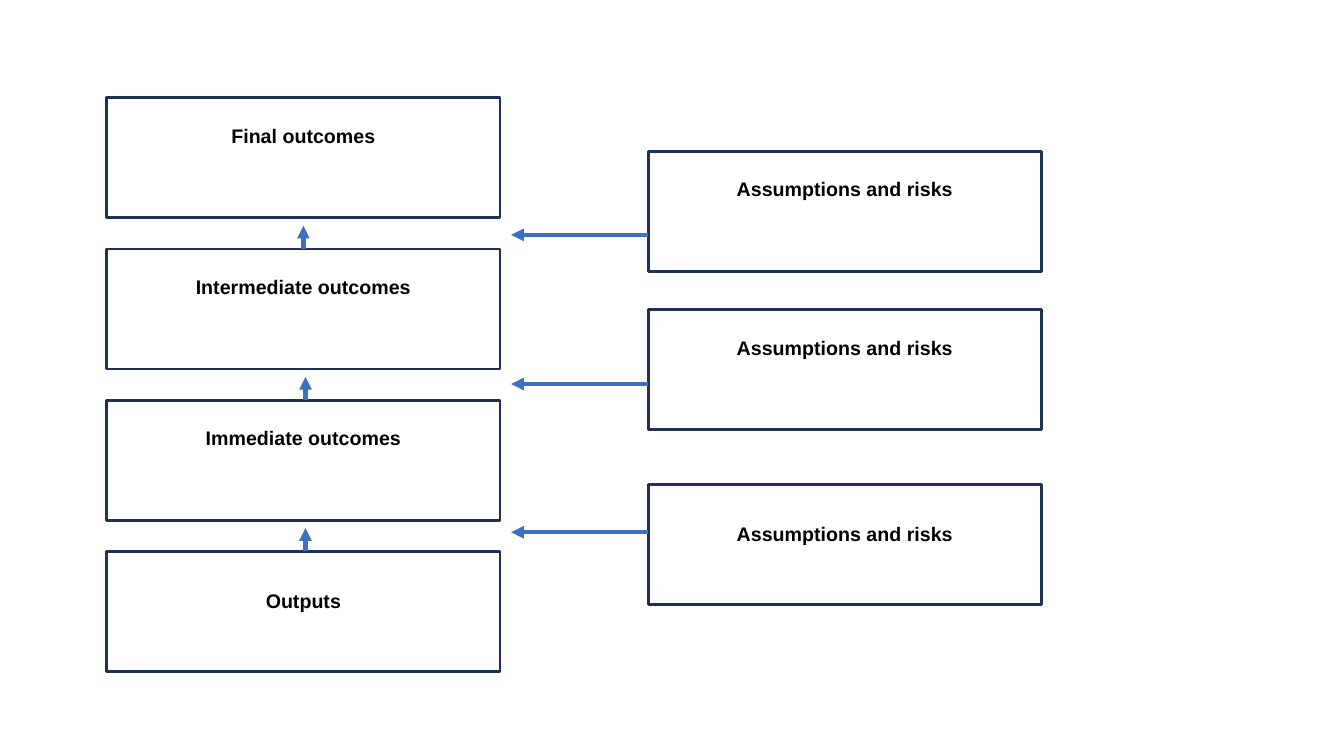
from dataclasses import dataclass

from lxml.etree import SubElement
from pptx import Presentation
from pptx.dml.color import RGBColor
from pptx.enum.shapes import MSO_CONNECTOR, MSO_SHAPE
from pptx.enum.text import MSO_ANCHOR, PP_ALIGN
from pptx.oxml.ns import qn
from pptx.util import Inches, Pt


@dataclass(frozen=True)
class Theme:
    font: str = "Arial"
    size: Pt = Pt(14)
    text: RGBColor = RGBColor(0x00, 0x00, 0x00)
    fill: RGBColor = RGBColor(0xFF, 0xFF, 0xFF)
    border: RGBColor = RGBColor(0x1E, 0x32, 0x56)
    arrow: RGBColor = RGBColor(0x3F, 0x6F, 0xC3)
    border_width: Pt = Pt(2)
    arrow_width: Pt = Pt(3)


THEME = Theme()

BOX_W, BOX_H = 3.9, 1.19
OUTCOME_X, OUTCOME_TOP, OUTCOME_STEP = 1.06, 0.97, 1.5
RISK_X = 6.43
HIGH_TEXT, LOW_TEXT = 0.26, 0.37

# Label and the space above it
OUTCOMES = [
    ("Final outcomes", HIGH_TEXT),
    ("Intermediate outcomes", HIGH_TEXT),
    ("Immediate outcomes", HIGH_TEXT),
    ("Outputs", LOW_TEXT),
]
# Box top, space above the label, height of the arrow
RISKS = [
    (1.5, HIGH_TEXT, 2.33),
    (3.07, HIGH_TEXT, 3.81),
    (4.81, LOW_TEXT, 5.28),
]
# Centre of each arrow that rises from an outcome box
RISE_X = [3.01, 3.03, 3.03]


def add_box(s, label, x, y, text_top):
    sp = s.shapes.add_shape(MSO_SHAPE.RECTANGLE, Inches(x), Inches(y),
                            Inches(BOX_W), Inches(BOX_H))
    sp.shadow.inherit = False
    sp.fill.solid()
    sp.fill.fore_color.rgb = THEME.fill
    sp.line.color.rgb = THEME.border
    sp.line.width = THEME.border_width
    tf = sp.text_frame
    tf.word_wrap = True
    tf.vertical_anchor = MSO_ANCHOR.TOP
    tf.margin_top = Inches(text_top)
    p = tf.paragraphs[0]
    p.text = label
    p.alignment = PP_ALIGN.CENTER
    p.font.name = THEME.font
    p.font.size = THEME.size
    p.font.bold = True
    p.font.color.rgb = THEME.text


def add_arrow(s, x1, y1, x2, y2):
    """Draw a straight line with its arrowhead at (x2, y2)."""
    line = s.shapes.add_connector(MSO_CONNECTOR.STRAIGHT, Inches(x1), Inches(y1),
                                  Inches(x2), Inches(y2))
    line.line.color.rgb = THEME.arrow
    line.line.width = THEME.arrow_width
    SubElement(line.line._get_or_add_ln(), qn("a:tailEnd"), type="triangle")
    SubElement(line._element.spPr, qn("a:effectLst"))


def main():
    prs = Presentation()
    prs.slide_width, prs.slide_height = Inches(13.33), Inches(7.5)
    s = prs.slides.add_slide(prs.slide_layouts[6])

    for i, (label, text_top) in enumerate(OUTCOMES):
        add_box(s, label, OUTCOME_X, OUTCOME_TOP + i * OUTCOME_STEP, text_top)
    for i, x in enumerate(RISE_X, start=1):
        y = OUTCOME_TOP + i * OUTCOME_STEP
        add_arrow(s, x, y, x, y - 0.23)
    for y, text_top, arrow_y in RISKS:
        add_box(s, "Assumptions and risks", RISK_X, y, text_top)
        add_arrow(s, RISK_X, arrow_y, RISK_X - 1.36, arrow_y)

    prs.save("out.pptx")


if __name__ == "__main__":
    main()
